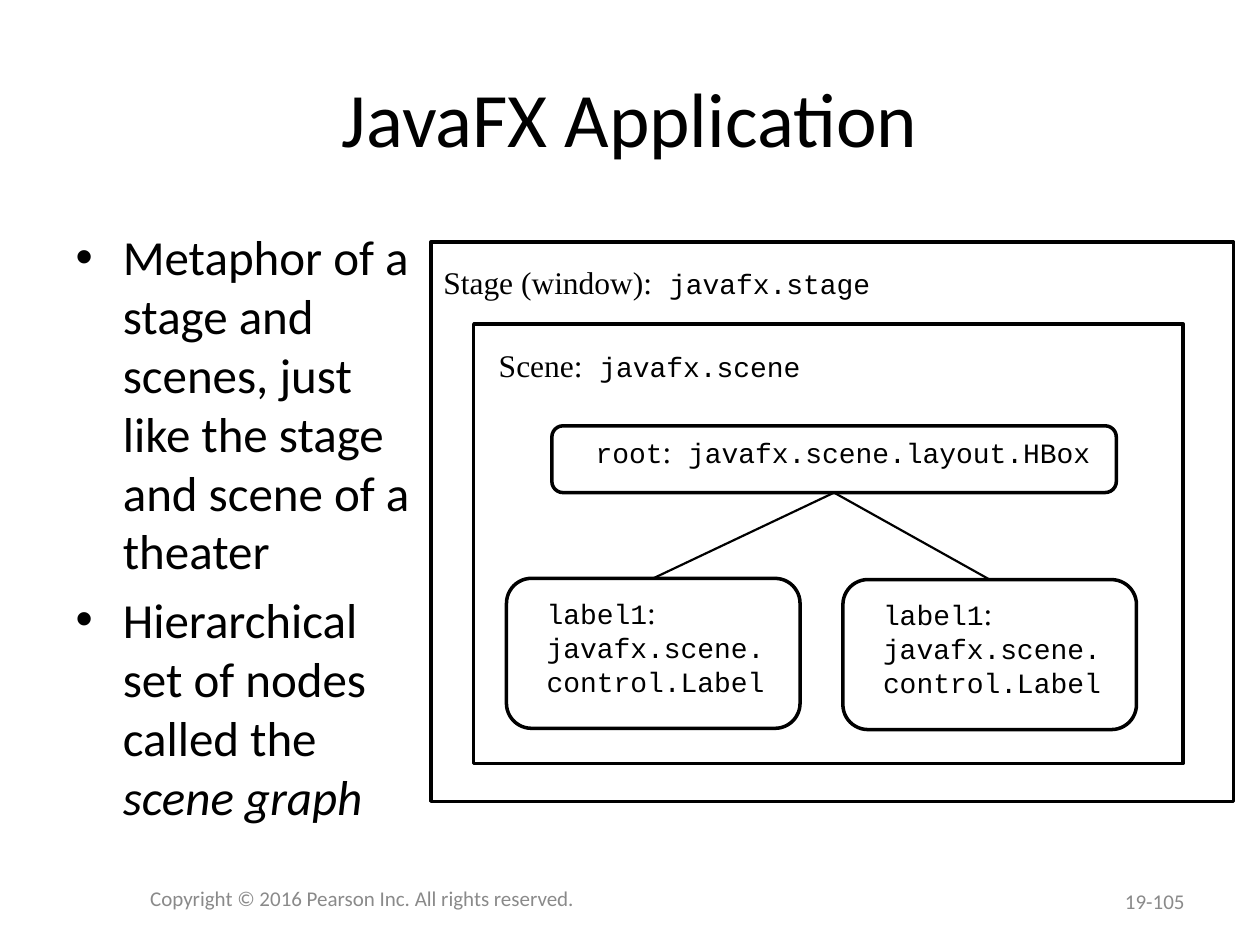
from dataclasses import dataclass

from lxml.etree import SubElement
from pptx import Presentation
from pptx.dml.color import RGBColor
from pptx.enum.shapes import MSO_CONNECTOR, MSO_SHAPE
from pptx.enum.text import MSO_ANCHOR, MSO_AUTO_SIZE, PP_ALIGN
from pptx.oxml.ns import qn
from pptx.util import Inches, Pt


@dataclass(frozen=True)
class Theme:
    """Hold the colours, fonts, type sizes and line widths."""
    ink: RGBColor = RGBColor(0x00, 0x00, 0x00)
    muted: RGBColor = RGBColor(0x8A, 0x8A, 0x8A)
    sans: str = "Calibri"
    serif: tuple = ("Times New Roman", 18)
    code: tuple = ("Courier New", 16)
    title: int = 44
    body: int = 28
    footer: int = 12
    frame: float = 2
    edge: float = 1.25


@dataclass(frozen=True)
class Box:
    """Describe an area in cells of a grid 100 columns wide and 75 rows high."""
    x: float
    y: float
    w: float
    h: float

    def inner(self, dx, dy, w, h):
        """Return a box offset from this box's top left corner."""
        return Box(self.x + dx, self.y + dy, w, h)

    def emu(self):
        """Return left, top, width and height as lengths."""
        return [cells(v) for v in (self.x, self.y, self.w, self.h)]


THEME = Theme()
WIDTH, HEIGHT, COLUMNS = 10, 7.5, 100


def cells(n):
    """Convert grid cells to a length."""
    return Inches(n * WIDTH / COLUMNS)


def style(font, name, size, color=THEME.ink):
    """Set the face, size and colour of a font."""
    font.name, font.size = name, Pt(size)
    font.color.rgb = color


def fill_placeholder(sp, box, paragraphs, size):
    """Move a placeholder and fill it with paragraphs of (text, italic) runs."""
    sp.left, sp.top, sp.width, sp.height = box.emu()
    tf = sp.text_frame
    tf.auto_size = MSO_AUTO_SIZE.NONE
    for i, runs in enumerate(paragraphs):
        p = tf.paragraphs[0] if i == 0 else tf.add_paragraph()
        p.space_before = Pt(size * 0.2 if i else 0)
        style(p.font, THEME.sans, size)
        for text, italic in runs:
            r = p.add_run()
            r.text = text
            if italic:
                r.font.italic = True


def add_footer(slide, box, text, align):
    """Add one grey footer line."""
    tf = slide.shapes.add_textbox(*box.emu()).text_frame
    tf.word_wrap = True
    tf.vertical_anchor = MSO_ANCHOR.MIDDLE
    p = tf.paragraphs[0]
    p.text, p.alignment = text, align
    style(p.font, THEME.sans, THEME.footer, THEME.muted)


def add_frame(slide, box, kind=MSO_SHAPE.RECTANGLE):
    """Add an unfilled outlined shape."""
    sp = slide.shapes.add_shape(kind, *box.emu())
    sp.shadow.inherit = False
    sp.fill.background()
    sp.line.color.rgb = THEME.ink
    sp.line.width = Pt(THEME.frame)
    return sp


def add_caption(slide, box, lines, wrap=False):
    """Add lines made of (text, (font, size)) runs."""
    tf = slide.shapes.add_textbox(*box.emu()).text_frame
    tf.word_wrap = wrap
    for i, runs in enumerate(lines):
        p = tf.paragraphs[0] if i == 0 else tf.add_paragraph()
        for text, face in runs:
            r = p.add_run()
            r.text = text
            style(r.font, *face)


def add_label_node(slide, box):
    """Add a rounded label node with its class name."""
    sp = add_frame(slide, box, MSO_SHAPE.ROUNDED_RECTANGLE)
    lines = [[("label1", THEME.code), (": ", THEME.serif), ("javafx.scene.", THEME.code)],
             [("control.Label", THEME.code)]]
    add_caption(slide, box.inner(2.2, 0.65, 21.1, 9.4), lines, wrap=True)
    return sp


def add_edge(slide, child, parent):
    """Join the top of a child node to the bottom of its parent."""
    line = slide.shapes.add_connector(MSO_CONNECTOR.STRAIGHT, 0, 0, 0, 0)
    line.begin_connect(child, 0)
    line.end_connect(parent, 2)
    line.line.color.rgb = THEME.ink
    line.line.width = Pt(THEME.edge)
    SubElement(line._element.spPr, qn("a:effectLst"))


def add_stage(slide, stage):
    """Draw the stage, its scene and the scene graph."""
    add_frame(slide, stage)
    add_caption(slide, stage.inner(0, 1.2, 36.2, 4),
                [[("Stage (window):", THEME.serif), (" javafx.stage", THEME.code)]])

    scene = stage.inner(3.4, 6.5, 56.3, 34.9)
    add_frame(slide, scene)
    add_caption(slide, scene.inner(1, 1.3, 26.2, 4),
                [[("Scene:", THEME.serif), (" javafx.scene", THEME.code)]])

    root_box = scene.inner(6.2, 8.1, 44.8, 5.3)
    root = add_frame(slide, root_box, MSO_SHAPE.ROUNDED_RECTANGLE)
    add_caption(slide, root_box.inner(2.5, 0, 42.4, 4),
                [[("root", THEME.code), (":", THEME.serif),
                  (" javafx.scene.layout.HBox", THEME.code)]])

    for dx, dy in ((2.6, 20.2), (29.3, 20.3)):
        add_edge(slide, add_label_node(slide, scene.inner(dx, dy, 23.3, 11.9)), root)


def main():
    """Build and save the slide."""
    prs = Presentation()
    prs.slide_width, prs.slide_height = Inches(WIDTH), Inches(HEIGHT)
    slide = prs.slides.add_slide(prs.slide_layouts[1])
    title, body = slide.placeholders
    fill_placeholder(title, Box(5, 3, 90, 12.5), [[("JavaFX Application", False)]], THEME.title)
    fill_placeholder(body, Box(5, 17.5, 29.2, 49.5), [
        [("Metaphor of a stage and scenes, just like the stage and scene of a theater", False)],
        [("Hierarchical set of nodes called the ", False), ("scene graph", True)],
    ], THEME.body)
    add_footer(slide, Box(71.7, 69.5, 23.3, 4), "19-105", PP_ALIGN.RIGHT)
    add_footer(slide, Box(5, 69.3, 47.5, 4),
               "Copyright © 2016 Pearson Inc. All rights reserved.", PP_ALIGN.CENTER)
    add_stage(slide, Box(34.2, 19.2, 63.7, 44.4))
    prs.save("out.pptx")


if __name__ == "__main__":
    main()
